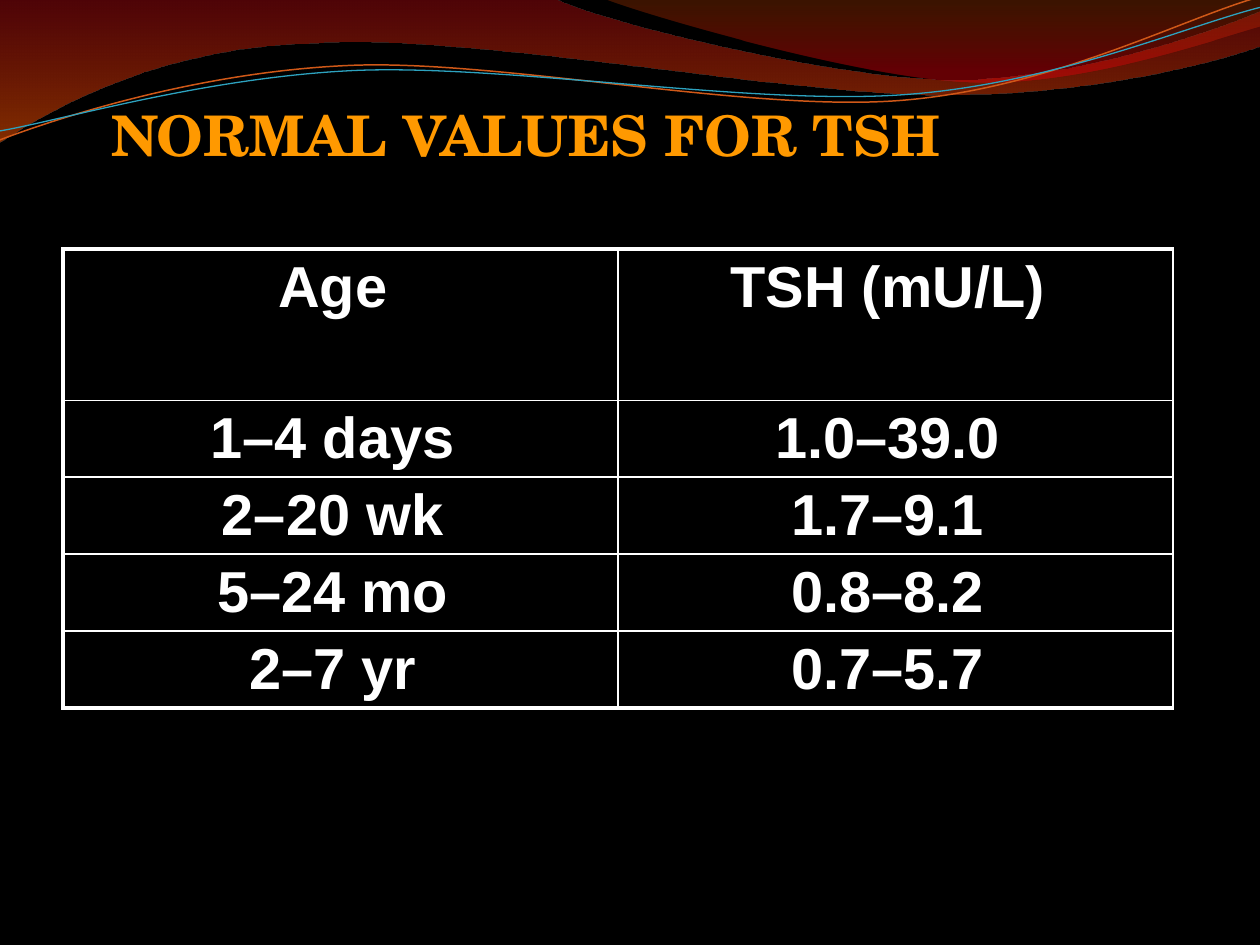
from lxml import etree
from pptx import Presentation
from pptx.dml.color import RGBColor
from pptx.enum.text import MSO_ANCHOR, MSO_AUTO_SIZE, PP_ALIGN
from pptx.oxml.ns import qn
from pptx.util import Cm, Pt

LEFT, CENTER = PP_ALIGN.LEFT, PP_ALIGN.CENTER
TOP, BOTTOM = MSO_ANCHOR.TOP, MSO_ANCHOR.BOTTOM
NO_AUTOFIT = MSO_AUTO_SIZE.NONE
TITLE_ONLY = 5
THIN, THICK = 1, 2.25

BLACK, WHITE, ORANGE = "000000", "FFFFFF", "FF9900"

# Outlines in cm: a pair is a straight step, six numbers are a Bézier curve
WAVES = [
    ([(0, 0), (11.18, -0.03),
      (12.09, 0.43, 16.87, 1.6, 19.25, 1.6),
      (21.67, 1.6, 24.33, 0.66, 25.4, 0.23),
      (25.43, 0.91),
      (24.97, 1.12, 22.1, 1.93, 18.95, 1.91),
      (15.8, 1.91, 9.7, 0.71, 6.53, 0.86),
      (3.28, 0.91, 1.17, 2.11, -0.03, 2.87),
      (0, 0)],
     [(0, "AF0911", 45), (1, "EE5300", 55)]),
    ([(12.17, -0.03),
      (12.93, 0.28, 17.32, 1.57, 19.53, 1.65),
      (21.74, 1.75, 24.41, 0.81, 25.4, 0.53),
      (25.4, 0), (12.17, -0.03)],
     [(0, "C24400", 30), (0.8, "DC000B", 45)]),
]
SWOOSHES = [
    ([(0, 2.82),
      (1.22, 2.36, 4.01, 1.45, 7.04, 1.32),
      (10.03, 1.19, 15.06, 2.26, 18.11, 2.03),
      (21.16, 1.8, 23.83, 0.38, 25.35, -0.05)], "CF5818", 0.85),
    ([(0, 2.64),
      (1.19, 2.44, 4.17, 1.55, 7.19, 1.42),
      (10.24, 1.3, 15.16, 2.13, 18.21, 1.91),
      (21.23, 1.7, 23.9, 0.53, 25.4, 0.15)], "2DA2BF", 0.75),
]
TSH_VALUES = [
    ("Age", "TSH (mU/L)"),
    ("1–4 days", "1.0–39.0"),
    ("2–20 wk", "1.7–9.1"),
    ("5–24 mo", "0.8–8.2"),
    ("2–7 yr", "0.7–5.7"),
]


def color(hex_string):
    return RGBColor.from_string(hex_string)


def write_text(text_frame, text, *, font, size, fill, bold=True, align=LEFT):
    paragraph = text_frame.paragraphs[0]
    paragraph.alignment = align
    run = paragraph.add_run()
    run.text = text
    run.font.name = font
    run.font.size = Pt(size)
    run.font.bold = bold
    run.font.color.rgb = color(fill)


def add_outline(slide, outline, left, top, closed):
    # Lay every end and control point as a vertex
    points = [(left + Cm(x), top + Cm(y))
              for step in outline for x, y in zip(step[::2], step[1::2])]
    builder = slide.shapes.build_freeform(*points[0])
    builder.add_line_segments(points[1:], close=closed)
    shape = builder.convert_to_shape()
    shape.shadow.inherit = False

    # Join the three vertices of each curve into one Bézier step
    vertices = iter(list(shape._element.spPr.iter(qn("a:lnTo"))))
    for step in outline[1:]:
        segment = next(vertices)
        if len(step) == 6:
            segment.addprevious(curve := etree.Element(qn("a:cubicBezTo")))
            for vertex in (segment, next(vertices), next(vertices)):
                curve.append(vertex[0])
                vertex.getparent().remove(vertex)
    return shape


def add_wave_banner(slide, left, top):
    # Translucent gradient waves
    for outline, stops in WAVES:
        shape = add_outline(slide, outline, left, top, closed=True)
        shape.line.fill.background()
        shape.fill.gradient()
        shape.fill.gradient_angle = 270
        for stop, (position, hex_string, _) in zip(shape.fill.gradient_stops, stops):
            stop.position = position
            stop.color.rgb = color(hex_string)
        stop_colors = shape._element.spPr.iter(qn("a:srgbClr"))
        for element, (_, _, opacity) in zip(stop_colors, stops):
            etree.SubElement(element, qn("a:alpha"), val=str(opacity * 1000))

    # Thin swooshes
    for outline, hex_string, width in SWOOSHES:
        shape = add_outline(slide, outline, left, top, closed=False)
        shape.fill.background()
        shape.line.color.rgb = color(hex_string)
        shape.line.width = Pt(width)


def place_title(slide, text, left, top, width, height):
    title = slide.shapes.title
    title.left, title.top, title.width, title.height = left, top, width, height
    frame = title.text_frame
    frame.auto_size = NO_AUTOFIT
    frame.word_wrap = True
    frame.vertical_anchor = BOTTOM
    frame.margin_left = frame.margin_right = Cm(0.13)
    frame.margin_top = frame.margin_bottom = 0
    write_text(frame, text, font="TeX Gyre Schola", size=32, fill=ORANGE)
    # Bring the title in front of the banner
    slide.shapes._spTree.append(title._element)


def set_borders(cell, **widths):
    properties = cell._tc.get_or_add_tcPr()
    for side, width in widths.items():
        line = etree.SubElement(properties, qn(f"a:ln{side}"), w=str(Pt(width)))
        fill = etree.SubElement(line, qn("a:solidFill"))
        etree.SubElement(fill, qn("a:srgbClr"), val=WHITE)


def add_value_table(slide, rows, left, top, width, header_height, row_height):
    column_count, last_row = len(rows[0]), len(rows) - 1
    height = header_height + row_height * last_row
    frame = slide.shapes.add_table(len(rows), column_count, left, top, width, height)
    table = frame.table
    table.first_row = table.horz_banding = False
    for column in table.columns:
        column.width = width // column_count
    for row_index, values in enumerate(rows):
        table.rows[row_index].height = row_height if row_index else header_height
        for column_index, value in enumerate(values):
            cell = table.cell(row_index, column_index)
            set_borders(cell,
                        L=THIN if column_index else THICK,
                        R=THIN,
                        T=THIN if row_index else THICK,
                        B=THICK if row_index == last_row else THIN)
            cell.fill.background()
            cell.vertical_anchor = TOP
            cell.margin_top, cell.margin_bottom = Cm(0.12), Cm(0.08)
            # The wider right margin shifts the centred text to the left
            cell.margin_left, cell.margin_right = Cm(0.25), Cm(0.57)
            write_text(cell.text_frame, value, font="Arial", size=33,
                       fill=WHITE, align=CENTER)


def main():
    presentation = Presentation()
    presentation.slide_width, presentation.slide_height = Cm(25.4), Cm(19.05)
    slide = presentation.slides.add_slide(presentation.slide_layouts[TITLE_ONLY])
    slide.background.fill.solid()
    slide.background.fill.fore_color.rgb = color(BLACK)

    add_wave_banner(slide, Cm(0), Cm(0))
    place_title(slide, "NORMAL VALUES FOR TSH", Cm(2.11), Cm(1.48), Cm(19.69), Cm(1.9))
    add_value_table(slide, TSH_VALUES, Cm(1.27), Cm(5.02), Cm(22.38),
                    header_height=Cm(3.05), row_height=Cm(1.55))
    presentation.save("out.pptx")


if __name__ == "__main__":
    main()
